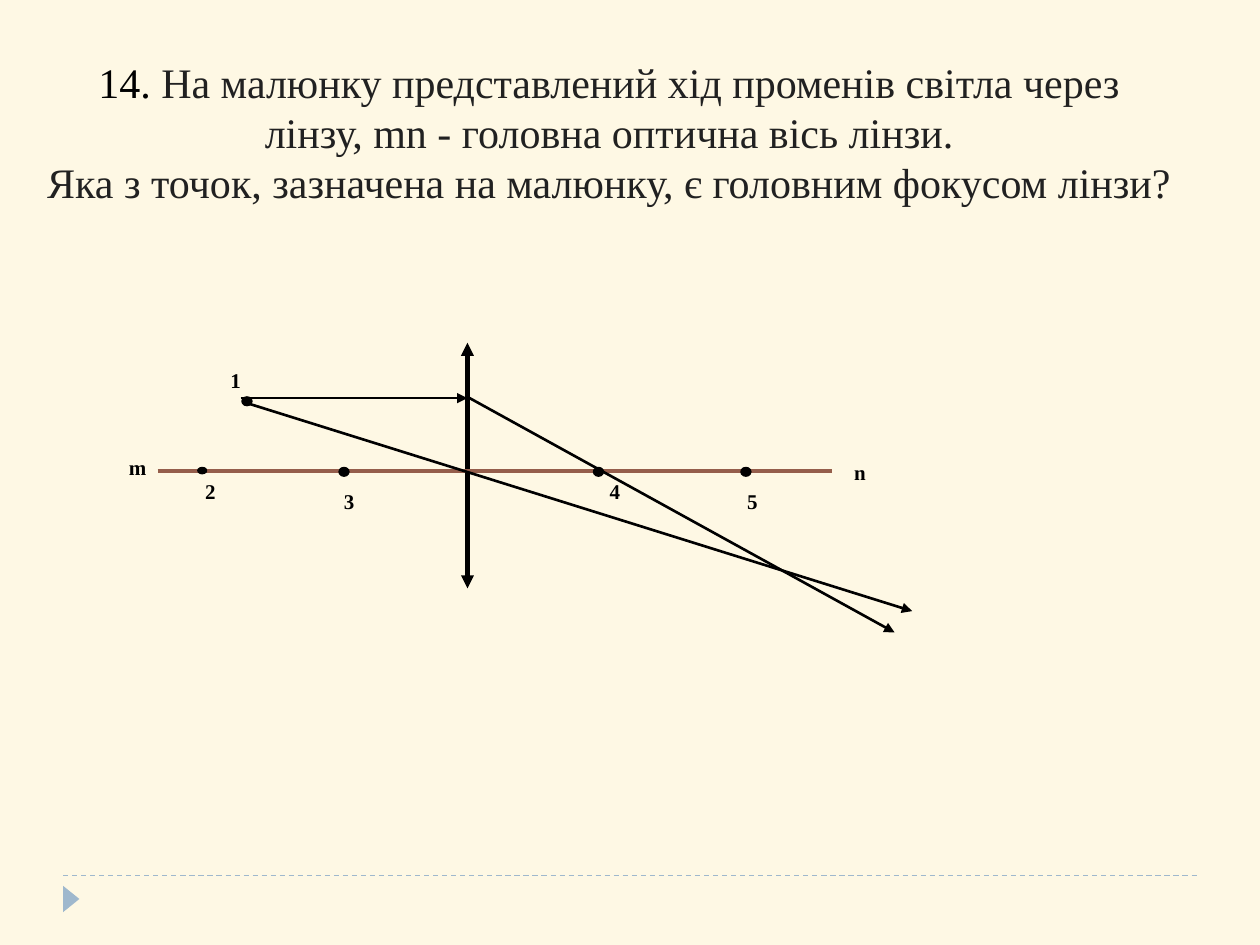
from dataclasses import dataclass

from lxml import etree
from pptx import Presentation
from pptx.dml.color import RGBColor
from pptx.enum import dml, shapes, text
from pptx.oxml import ns
from pptx.util import Inches, Pt


@dataclass(frozen=True)
class Theme:
    background: str = "FEF8E4"
    ink: str = "000000"
    title: str = "212121"
    axis: str = "955E4B"
    accent: str = "9FB8CD"
    font: str = "Times New Roman"
    title_size: float = 24
    label_size: float = 12


@dataclass(frozen=True)
class Line:
    start: tuple[float, float]
    end: tuple[float, float]
    width: float = 1.5
    color: str = Theme.ink
    head: bool = False
    tail: bool = True
    dashed: bool = False


@dataclass(frozen=True)
class Dot:
    left: float
    top: float = 3.71
    width: float = 0.08
    height: float = 0.07


@dataclass(frozen=True)
class Label:
    text: str
    left: float
    top: float


THEME = Theme()
LENS_X, AXIS_Y = 3.71, 3.74
LABEL_W, LABEL_H = 0.72, 0.54

LINES = [
    Line((LENS_X, 2.72), (LENS_X, 4.67), 2.5, head=True),
    Line((1.25, AXIS_Y), (6.6, AXIS_Y), 2.25, THEME.axis, tail=False),
    Line((1.91, 3.16), (LENS_X, 3.16)),
    Line((LENS_X, 3.15), (7.1, 5.02)),
    Line((1.93, 3.19), (7.24, 4.85)),
]
DOTS = [Dot(1.92, 3.15), Dot(1.57, width=0.07, height=0.05),
        Dot(2.69), Dot(4.71), Dot(5.88)]
LABELS = [
    Label("1", 1.29, 2.87), Label("2", 1.09, 3.75), Label("3", 2.19, 3.83),
    Label("4", 4.3, 3.75), Label("5", 5.39, 3.83),
    Label("m", 0.54, 3.56), Label("n", 6.25, 3.6),
]
TITLE = [
    [("14. ", THEME.ink),
     ("На малюнку представлений хід променів світла через", THEME.title)],
    [("лінзу, mn - головна оптична вісь лінзи.", THEME.title)],
    [("Яка з точок, зазначена на малюнку, є головним фокусом лінзи?", THEME.title)],
]


def rgb(color: str) -> RGBColor:
    return RGBColor.from_string(color)


def add_line(parent, line: Line):
    sp = parent.add_connector(shapes.MSO_CONNECTOR.STRAIGHT,
                              *map(Inches, line.start + line.end))
    sp.line.color.rgb = rgb(line.color)
    sp.line.width = Pt(line.width)
    if line.dashed:
        sp.line.dash_style = dml.MSO_LINE.DASH
    ln = sp.line._get_or_add_ln()
    for tag, shown in (("a:headEnd", line.head), ("a:tailEnd", line.tail)):
        if shown:
            etree.SubElement(ln, ns.qn(tag), type="triangle")
    etree.SubElement(sp._element.spPr, ns.qn("a:effectLst"))


def add_filled(parent, kind, box: tuple[float, ...], color: str):
    sp = parent.add_shape(kind, *map(Inches, box))
    sp.shadow.inherit = False
    sp.fill.solid()
    sp.fill.fore_color.rgb = rgb(color)
    return sp


def add_dot(parent, dot: Dot):
    sp = add_filled(parent, shapes.MSO_SHAPE.OVAL,
                    (dot.left, dot.top, dot.width, dot.height), THEME.ink)
    sp.line.color.rgb = rgb(THEME.ink)
    sp.line.width = Pt(0.75)


def add_run(p, content: str, size: float, color: str, bold: bool = False):
    r = p.add_run()
    r.text = content
    r.font.name = THEME.font
    r.font.size = Pt(size)
    r.font.bold = bold
    r.font.color.rgb = rgb(color)


def add_label(parent, label: Label):
    sp = parent.add_textbox(*map(Inches, (label.left, label.top, LABEL_W, LABEL_H)))
    tf = sp.text_frame
    tf.word_wrap = True
    p = tf.paragraphs[0]
    p.alignment = text.PP_ALIGN.RIGHT
    add_run(p, label.text, THEME.label_size, THEME.ink, bold=True)


def add_title(parent):
    sp = parent.add_textbox(*map(Inches, (0.23, 0.39, 9.21, 1.31)))
    tf = sp.text_frame
    tf.word_wrap = False
    tf.auto_size = text.MSO_AUTO_SIZE.SHAPE_TO_FIT_TEXT
    tf.vertical_anchor = text.MSO_ANCHOR.MIDDLE
    for i, runs in enumerate(TITLE):
        p = tf.add_paragraph() if i else tf.paragraphs[0]
        p.alignment = text.PP_ALIGN.CENTER
        for content, color in runs:
            add_run(p, content, THEME.title_size, color)


def main():
    prs = Presentation()
    prs.slide_width, prs.slide_height = Inches(10), Inches(7.5)
    s = prs.slides.add_slide(prs.slide_layouts[6])
    s.background.fill.solid()
    s.background.fill.fore_color.rgb = rgb(THEME.background)

    # Footer rule and marker
    add_line(s.shapes, Line((0.5, 6.95), (9.5, 6.95), 0.75, THEME.accent,
                            tail=False, dashed=True))
    marker = add_filled(s.shapes, shapes.MSO_SHAPE.ISOSCELES_TRIANGLE,
                        (0.46, 7.07, 0.21, 0.13), THEME.accent)
    marker.rotation = 90
    marker.line.fill.background()

    # Question
    add_title(s.shapes)

    # Lens diagram: axis and rays, points, labels
    diagram = s.shapes.add_group_shape().shapes
    for line in LINES:
        add_line(diagram, line)
    for dot in DOTS:
        add_dot(diagram, dot)
    for label in LABELS:
        add_label(diagram, label)

    prs.save("out.pptx")


if __name__ == "__main__":
    main()
